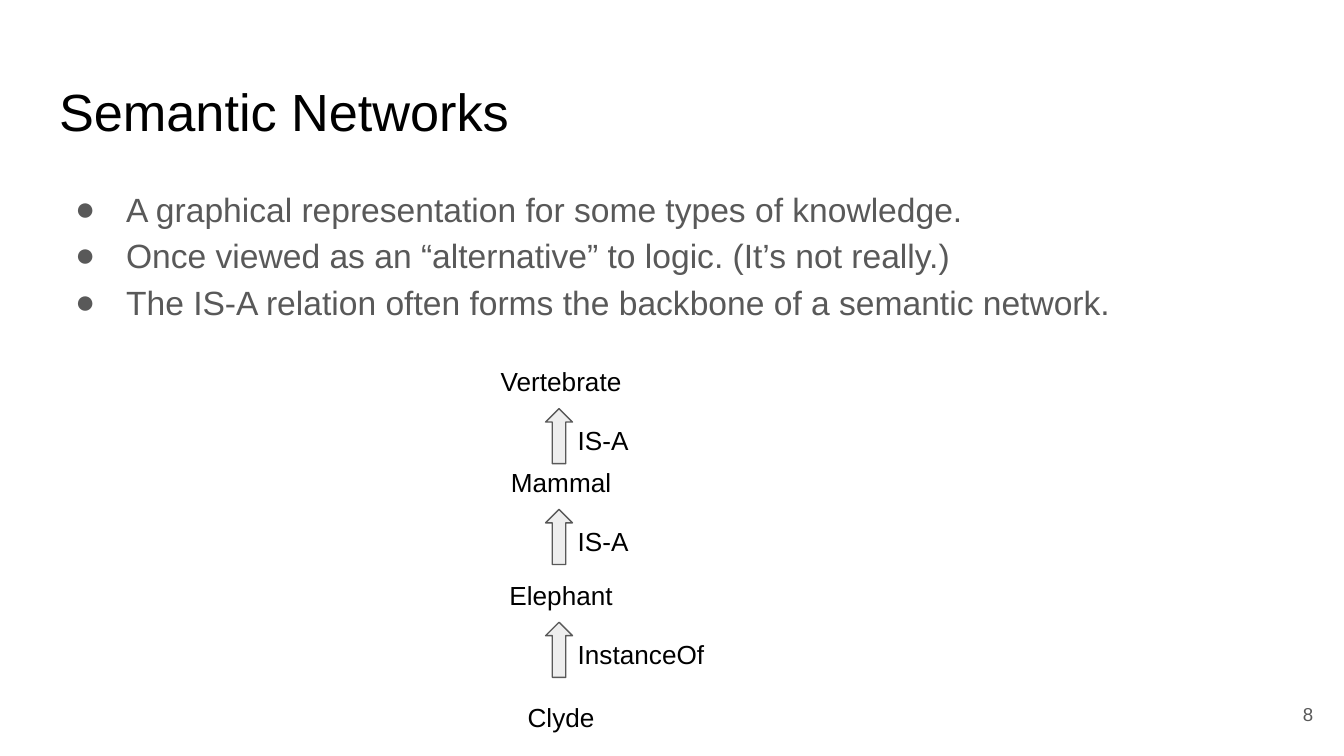
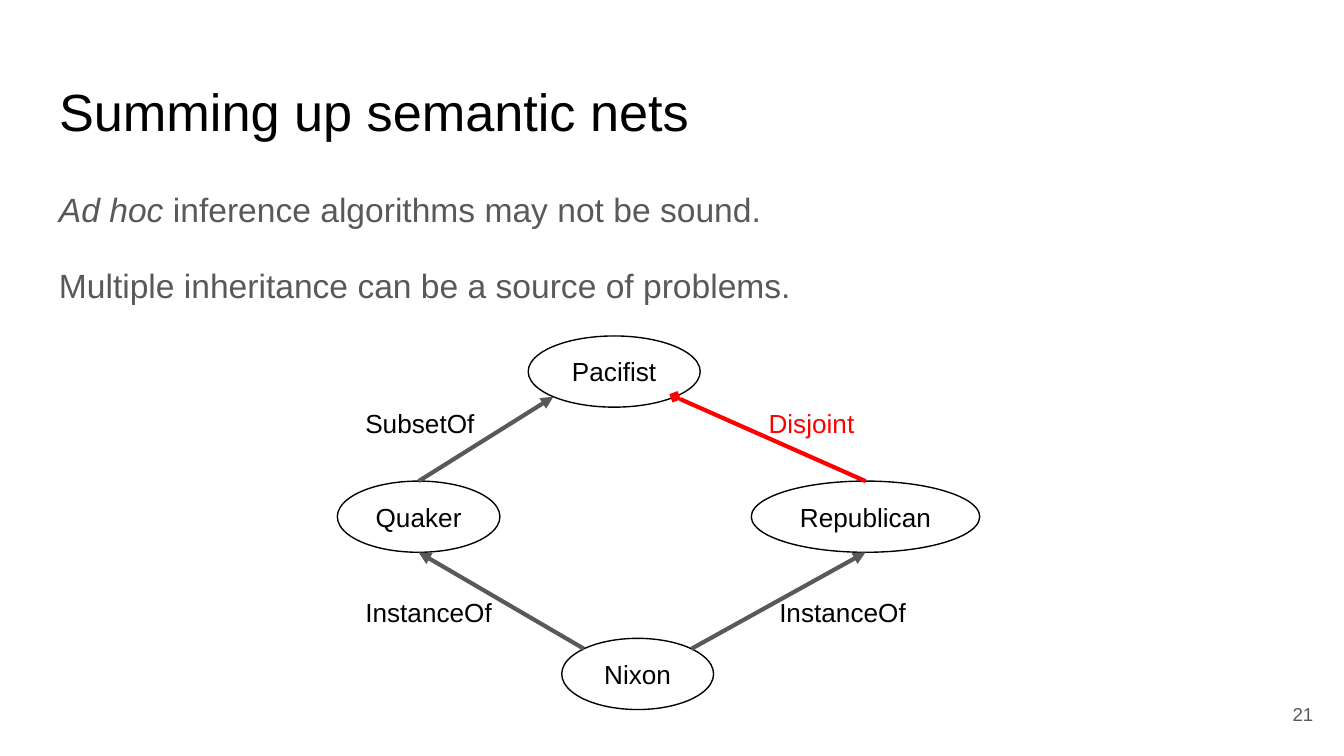
from math import cos, radians, sin

from lxml import etree
from pptx import Presentation
from pptx import util as u
from pptx.dml.color import RGBColor
from pptx.enum import shapes, text
from pptx.oxml.ns import qn

FONT = "Arial"
HUES = {"ink": "000000", "grey": "595959", "pale": "EEEEEE",
        "page": "FFFFFF", "red": "FF0000"}
SIZES = {"title": 28, "body": 18, "node": 14, "foot": 10}
TITLE = (0.34, 0.49, 9.32, 0.63)
BODY = (0.34, 1.26, 9.32, 3.74)
FOOT = (9.27, 5.1, 0.6, 0.43)
LEFT, MID, RIGHT = text.PP_ALIGN.LEFT, text.PP_ALIGN.CENTER, text.PP_ALIGN.RIGHT
TOP, MIDDLE = text.MSO_ANCHOR.TOP, text.MSO_ANCHOR.MIDDLE


def hue(name):
    """Return the named colour."""
    return RGBColor.from_string(HUES[name])


def inches(box):
    """Turn a row of numbers into lengths."""
    return [u.Inches(n) for n in box]


def write(shape, paras, size="node", color="ink", align=LEFT, anchor=TOP,
          wrap=True, lead=None, gap=0, bullet=False):
    """Fill a shape with paragraphs, each a string or a list of (string, italic)."""
    frame = shape.text_frame
    frame.word_wrap = wrap
    frame.auto_size = text.MSO_AUTO_SIZE.NONE
    frame.vertical_anchor = anchor
    frame.margin_left = frame.margin_right = u.Inches(0.1)
    frame.margin_top = frame.margin_bottom = u.Inches(0.1)
    for i, runs in enumerate([paras] if isinstance(paras, str) else paras):
        para = frame.add_paragraph() if i else frame.paragraphs[0]
        para.alignment = align
        para.line_spacing = lead
        para.space_before = u.Pt(gap if i else 0)
        if bullet:
            mark(para, size, color)
        for words, slant in [(runs, False)] if isinstance(runs, str) else runs:
            run = para.add_run()
            run.text = words
            font = run.font
            font.name, font.size, font.italic = FONT, u.Pt(SIZES[size]), slant
            font.color.rgb = hue(color)


def mark(para, size, color):
    """Give a paragraph a hanging round bullet."""
    props = para._p.get_or_add_pPr()
    props.set("marL", str(u.Inches(0.5)))
    props.set("indent", str(u.Inches(-0.38)))
    tint = etree.SubElement(props, qn("a:buClr"))
    etree.SubElement(tint, qn("a:srgbClr"), val=HUES[color])
    etree.SubElement(props, qn("a:buSzPts"), val=str(SIZES[size] * 100))
    etree.SubElement(props, qn("a:buFont"), typeface=FONT)
    etree.SubElement(props, qn("a:buChar"), char="●")


def label(slide, box, paras, **form):
    """Add a text box."""
    write(slide.shapes.add_textbox(*inches(box)), paras, **form)


def draw(slide, kind, box, line, fill=None):
    """Add an outlined preset shape."""
    shape = slide.shapes.add_shape(kind, *inches(box))
    shape.shadow.inherit = False
    if fill:
        shape.fill.solid()
        shape.fill.fore_color.rgb = hue(fill)
    else:
        shape.fill.background()
    shape.line.color.rgb = hue(line)
    shape.line.width = u.Pt(0.75)
    return shape


def site(oval, index):
    """Find one of an oval's eight sites, anticlockwise from the top."""
    turn = radians(90 + 45 * index)
    return (round(oval.left + oval.width * (1 + cos(turn)) / 2),
            round(oval.top + oval.height * (1 - sin(turn)) / 2))


def link(slide, start, end, color="grey", tip="triangle"):
    """Join two (oval, site) pairs with a glued arrow."""
    line = slide.shapes.add_connector(
        shapes.MSO_CONNECTOR.STRAIGHT, *site(*start), *site(*end))
    line.line.color.rgb = hue(color)
    line.line.width = u.Pt(2.25)
    etree.SubElement(line.line._get_or_add_ln(), qn("a:tailEnd"), type=tip)
    etree.SubElement(line._element.spPr, qn("a:effectLst"))
    glue = line._element.find(".//" + qn("p:cNvCxnSpPr"))
    for tag, (oval, index) in (("a:stCxn", start), ("a:endCxn", end)):
        etree.SubElement(glue, qn(tag), id=str(oval.shape_id), idx=str(index))


def page(deck, title, number, paras, **form):
    """Add a slide with its title, body text and number."""
    slide = deck.slides.add_slide(deck.slide_layouts[5])
    slide.background.fill.solid()
    slide.background.fill.fore_color.rgb = hue("page")
    head = slide.shapes.title
    head.left, head.top, head.width, head.height = inches(TITLE)
    write(head, title, size="title")
    label(slide, BODY, paras, size="body", color="grey", lead=1.15, **form)
    label(slide, FOOT, str(number), size="foot", color="grey",
          align=RIGHT, anchor=MIDDLE)
    return slide


def chain(slide, box, nodes, links):
    """Stack named nodes, each pointing up to the one above."""
    x, y, w, h = box
    for name, drop in nodes:
        label(slide, (x, y + drop, w, h), name, align=MID)
    for name, (_, drop) in zip(links, nodes):
        draw(slide, shapes.MSO_SHAPE.UP_ARROW,
             (x + 0.47, y + drop + 0.42, 0.2, h), "grey", "pale")
        label(slide, (x + 0.61, y + drop + 0.44, 1.33, h), name)


def net(slide, box):
    """Draw the diamond of ovals, arrows and arrow labels."""
    x, y, high = box
    spots = {"Nixon": (1.67, 2.25, 1.13), "Quaker": (0, 1.08, 1.21),
             "Republican": (3.08, 1.08, 1.7), "Pacifist": (1.42, 0, 1.28)}
    ovals = {}
    for name, (dx, dy, wide) in spots.items():
        ovals[name] = draw(slide, shapes.MSO_SHAPE.OVAL,
                           (x + dx, y + dy, wide, high), "ink")
        write(ovals[name], name, align=MID, anchor=MIDDLE, wrap=False)
    nixon, quaker, repub, peace = ovals.values()
    link(slide, (nixon, 1), (quaker, 4))
    link(slide, (nixon, 7), (repub, 4))
    link(slide, (quaker, 0), (peace, 3))
    link(slide, (repub, 0), (peace, 5), color="red", tip="diamond")
    for name, dx, dy, color in (("InstanceOf", 0.11, 1.84, "ink"),
                                ("InstanceOf", 3.19, 1.84, "ink"),
                                ("SubsetOf", 0.11, 0.43, "ink"),
                                ("Disjoint", 3.11, 0.43, "red")):
        label(slide, (x + dx, y + dy, 1.3, 0.32), name, color=color)


def main():
    """Build and save the deck."""
    deck = Presentation()
    deck.slide_width = u.Inches(10)
    deck.slide_height = u.Inches(10 * 9 / 16)
    slide = page(deck, "Semantic Networks", 8, [
        "A graphical representation for some types of knowledge.",
        "Once viewed as an “alternative” to logic. (It’s not really.)",
        "The IS-A relation often forms the backbone of a semantic network.",
    ], bullet=True)
    chain(slide, (3.59, 2.62, 1.17, 0.41),
          [("Vertebrate", 0), ("Mammal", 0.75), ("Elephant", 1.59), ("Clyde", 2.5)],
          ["IS-A", "IS-A", "InstanceOf"])
    slide = page(deck, "Summing up semantic nets", 21, [
        [("Ad hoc", True), (" inference algorithms may not be sound.", False)],
        "Multiple inheritance can be a source of problems.",
    ], gap=16)
    net(slide, (2.51, 2.5, 0.53))
    deck.save("out.pptx")


if __name__ == "__main__":
    main()
